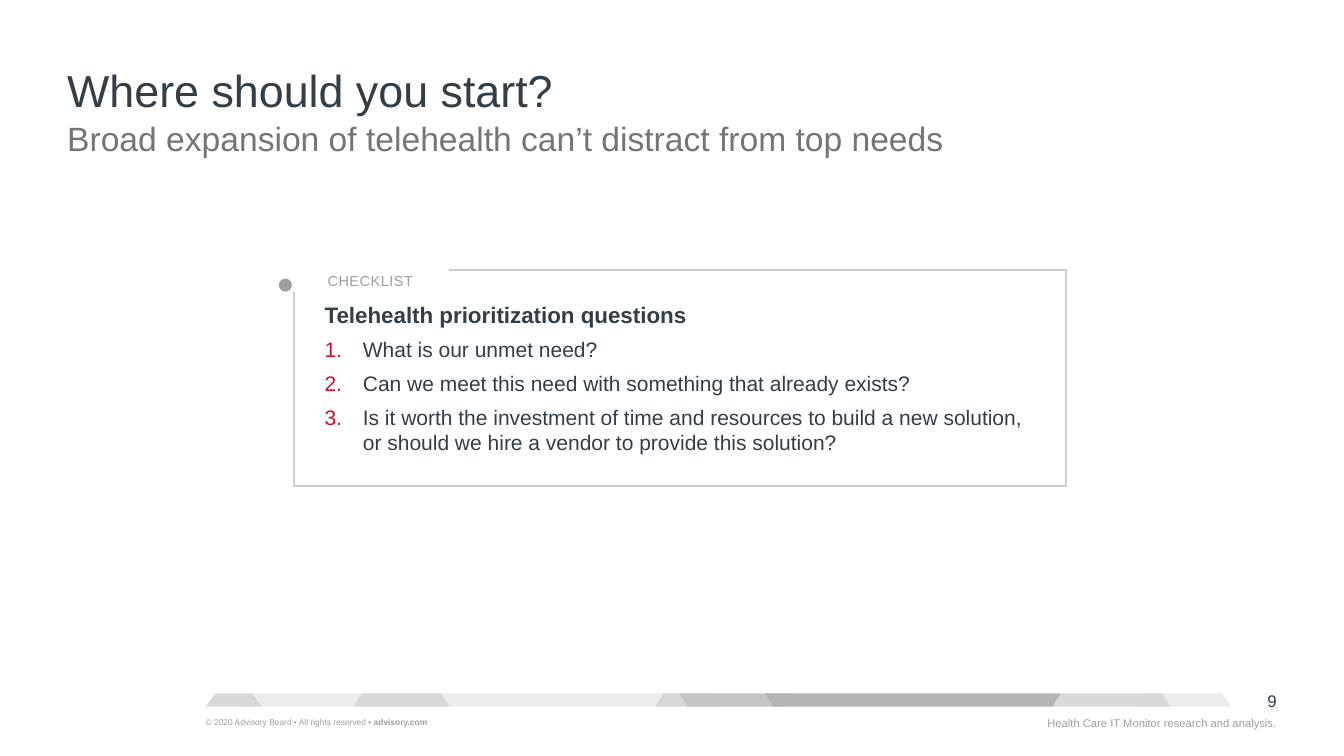
import lxml.etree
import pptx
import pptx.dml.color
import pptx.enum.shapes
import pptx.enum.text
import pptx.oxml.ns
import pptx.util

ALIGN = pptx.enum.text.PP_ALIGN
ANCHOR = pptx.enum.text.MSO_ANCHOR
FIT = pptx.enum.text.MSO_AUTO_SIZE
SHAPE = pptx.enum.shapes.MSO_SHAPE
COLS, ROWS = 160, 90
COLORS = {
    "ink": "323E48", "sub": "757576", "note": "9E9E9E", "red": "CE0E2D",
    "edge": "CCCCCC", "white": "FFFFFF",
    "pale": "ECECEC", "light": "D8D8D8", "mid": "C5C5C5", "dark": "B4B4B4",
}


class Page:
    def __init__(self, deck):
        self.font = "Arial"
        self.wide = deck.slide_width
        self.high = deck.slide_height
        self.slide = deck.slides.add_slide(deck.slide_layouts[1])

    def place(self, col, row, cols, rows):
        return [round(self.wide * col / COLS), round(self.high * row / ROWS),
                round(self.wide * cols / COLS), round(self.high * rows / ROWS)]

    def color(self, name):
        return pptx.dml.color.RGBColor.from_string(COLORS[name])

    def paint(self, shape, fill=None, line=None, width=0):
        shape.shadow.inherit = False
        if fill:
            shape.fill.solid()
            shape.fill.fore_color.rgb = self.color(fill)
        else:
            shape.fill.background()
        if line:
            shape.line.color.rgb = self.color(line)
            shape.line.width = pptx.util.Pt(width)
        else:
            shape.line.fill.background()
        return shape

    def bullet(self, para, indent, marks):
        props = para._p.get_or_add_pPr()
        props.set("marL", str(pptx.util.Inches(indent)))
        props.set("indent", str(-pptx.util.Inches(indent)))
        for tag, attrs in marks:
            item = lxml.etree.SubElement(props, pptx.oxml.ns.qn("a:" + tag), attrs)
            if tag == "buClr":
                lxml.etree.SubElement(item, pptx.oxml.ns.qn("a:srgbClr"), val=COLORS["red"])

    def words(self, para, text, size, color, bold=False, extra=()):
        run = para.add_run()
        run.text = text
        style = {"name": self.font, "size": pptx.util.Pt(size), "bold": bold}
        for key, value in style.items():
            setattr(run.font, key, value)
        run.font.color.rgb = self.color(color)
        for key, value in extra:
            run._r.get_or_add_rPr().set(key, value)

    def frame(self, shape, pads=(0, 0, 0, 0), **style):
        frame = shape.text_frame
        sides = ("margin_left", "margin_top", "margin_right", "margin_bottom")
        base = {"word_wrap": True, "auto_size": FIT.NONE, "vertical_anchor": ANCHOR.TOP}
        base.update(zip(sides, map(pptx.util.Inches, pads)))
        for key, value in (base | style).items():
            setattr(frame, key, value)
        return frame

    def text(self, area, runs, align=ALIGN.LEFT):
        box = self.slide.shapes.add_textbox(*self.place(*area))
        para = self.frame(box).paragraphs[0]
        para.alignment = align
        for run in runs:
            self.words(para, *run)

    def head(self, index, area, text, size, color, anchor):
        holder = self.slide.placeholders[index]
        holder.left, holder.top, holder.width, holder.height = self.place(*area)
        para = self.frame(holder, vertical_anchor=anchor).paragraphs[0]
        self.bullet(para, 0, [("buNone", {})])
        style = {"alignment": ALIGN.LEFT, "line_spacing": 0.9, "space_before": pptx.util.Pt(0)}
        for key, value in style.items():
            setattr(para, key, value)
        self.words(para, text, size, color)

    def shape(self, kind, area, **look):
        return self.paint(self.slide.shapes.add_shape(kind, *self.place(*area)), **look)

    def band(self, col, cols, fill, turn=0):
        part = self.shape(SHAPE.TRAPEZOID, (col, 82.56, cols, 1.56), fill=fill)
        part.adjustments[0] = 0.63
        part.rotation = turn

    def corner(self, points, fill):
        spots = [self.place(col, row, 0, 0)[:2] for col, row in points]
        form = self.slide.shapes.build_freeform(*spots[0])
        form.add_line_segments(spots[1:], close=True)
        self.paint(form.convert_to_shape(), fill=fill)

    def list(self, area, title, items):
        box = self.shape(SHAPE.RECTANGLE, area, line="edge", width=1.5)
        frame = self.frame(box, (0.3,) * 4, vertical_anchor=ANCHOR.MIDDLE)
        para = frame.paragraphs[0]
        para.alignment = ALIGN.LEFT
        self.words(para, title, 16, "ink", True)
        marks = [("buClr", {}), ("buFont", {"typeface": self.font}),
                 ("buAutoNum", {"type": "arabicPeriod"})]
        for item in items:
            para = frame.add_paragraph()
            self.bullet(para, 0.38, marks)
            para.alignment = ALIGN.LEFT
            para.space_before = pptx.util.Pt(6)
            self.words(para, item, 15, "ink")

    def label(self, area, text):
        box = self.shape(SHAPE.RECTANGLE, area, fill="white", line="white", width=3)
        frame = self.frame(box, (0, 0, 0.2, 0), word_wrap=False,
                           auto_size=FIT.SHAPE_TO_FIT_TEXT)
        para = frame.paragraphs[0]
        para.alignment = ALIGN.LEFT
        self.bullet(para, 0.5, [("buSzPct", {"val": "190000"}),
                                ("buFont", {"typeface": self.font}),
                                ("buChar", {"char": "•"})])
        self.words(para, text, 18, "note", extra=[("baseline", "36000"), ("spc", "30")])


def main():
    deck = pptx.Presentation()
    deck.slide_width = pptx.util.Inches(13.33)
    deck.slide_height = pptx.util.Inches(7.5)
    page = Page(deck)
    page.head(0, (8, 7.92, 144, 6), "Where should you start?", 32, "ink", ANCHOR.BOTTOM)
    page.head(1, (8, 14.52, 144, 4.44),
              "Broad expansion of telehealth can’t distract from top needs",
              24, "sub", ANCHOR.TOP)
    page.text((24.48, 85.32, 37.44, 1.2), [
        ("© 2020 Advisory Board • All rights reserved • ", 6, "note"),
        ("advisory.com", 6, "note", True)])
    page.text((146, 82.2, 6, 2.4), [("9", 12, "ink")], ALIGN.RIGHT)
    for band in [
        (28.2, 56.64, "pale"), (78, 7.92, "light"), (80.88, 13.44, "mid", 180),
        (42.12, 11.4, "light"), (135.12, 11.4, "pale"), (124.92, 14.4, "light"),
        (91.08, 35.16, "dark", 180),
    ]:
        page.band(*band)
    page.corner([(24.48, 84.12), (25.68, 82.56), (30, 82.56), (31.2, 84.12)], "light")
    page.text((101, 85.32, 51, 1.56),
              [("Health Care IT Monitor research and analysis.", 8, "note")], ALIGN.RIGHT)
    page.list((35.04, 32.16, 91.92, 25.68), "Telehealth prioritization questions", [
        "What is our unmet need?",
        "Can we meet this need with something that already exists?",
        "Is it worth the investment of time and resources to build a new solution, "
        "or should we hire a vendor to provide this solution?"])
    page.label((33, 32.16, 20.16, 2.4), "CHECKLIST")
    deck.save("out.pptx")


if __name__ == "__main__":
    main()
